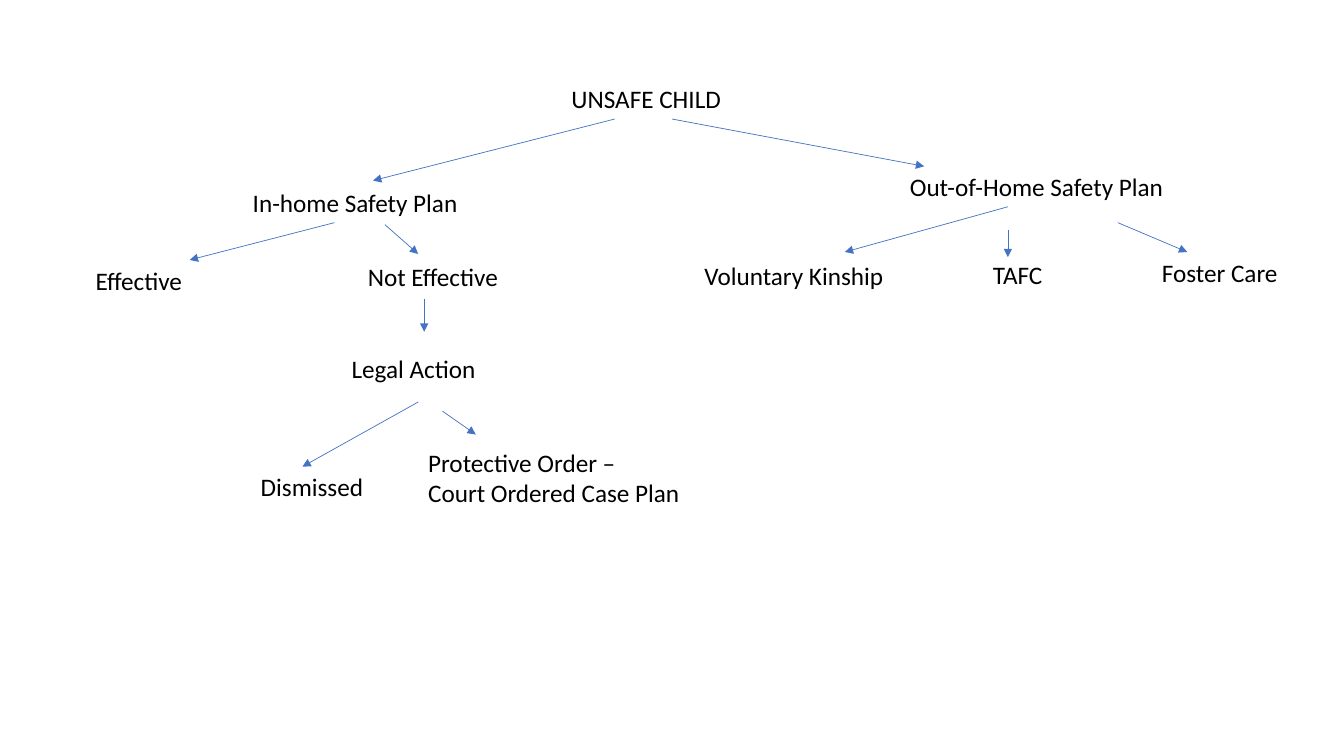
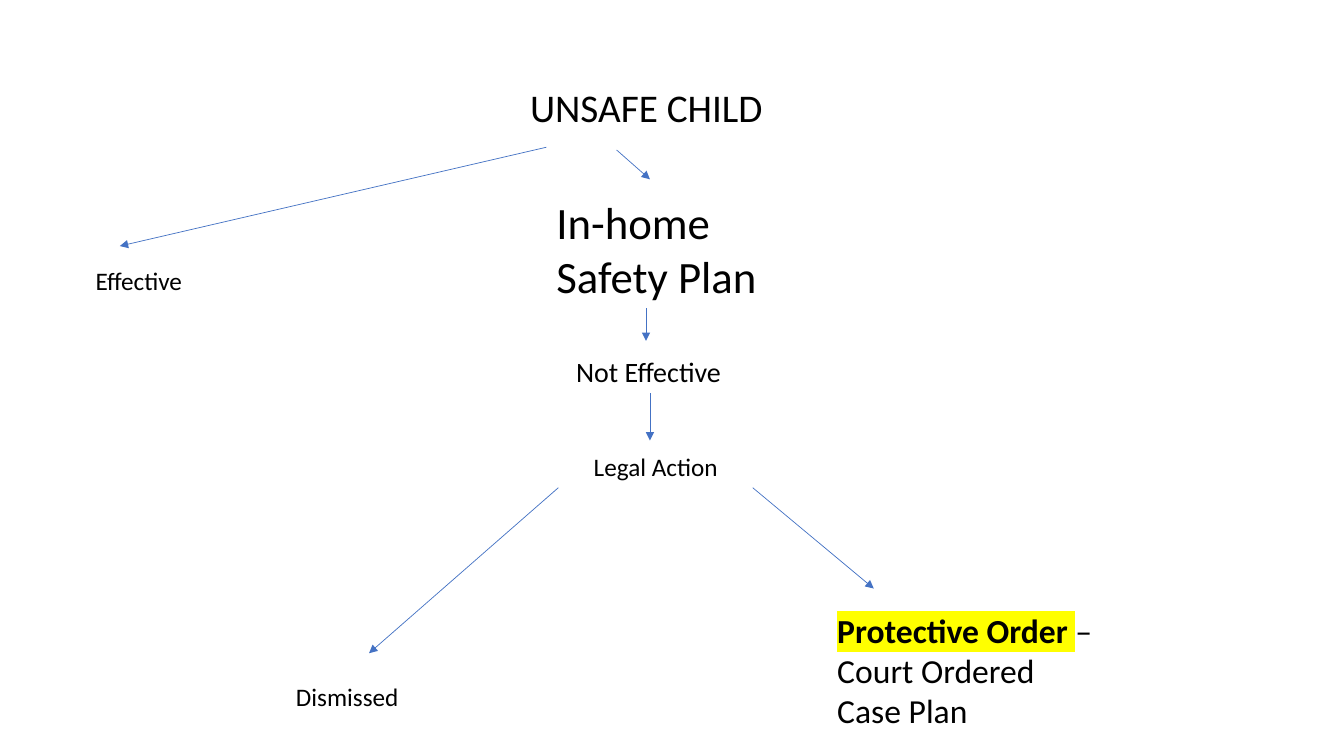
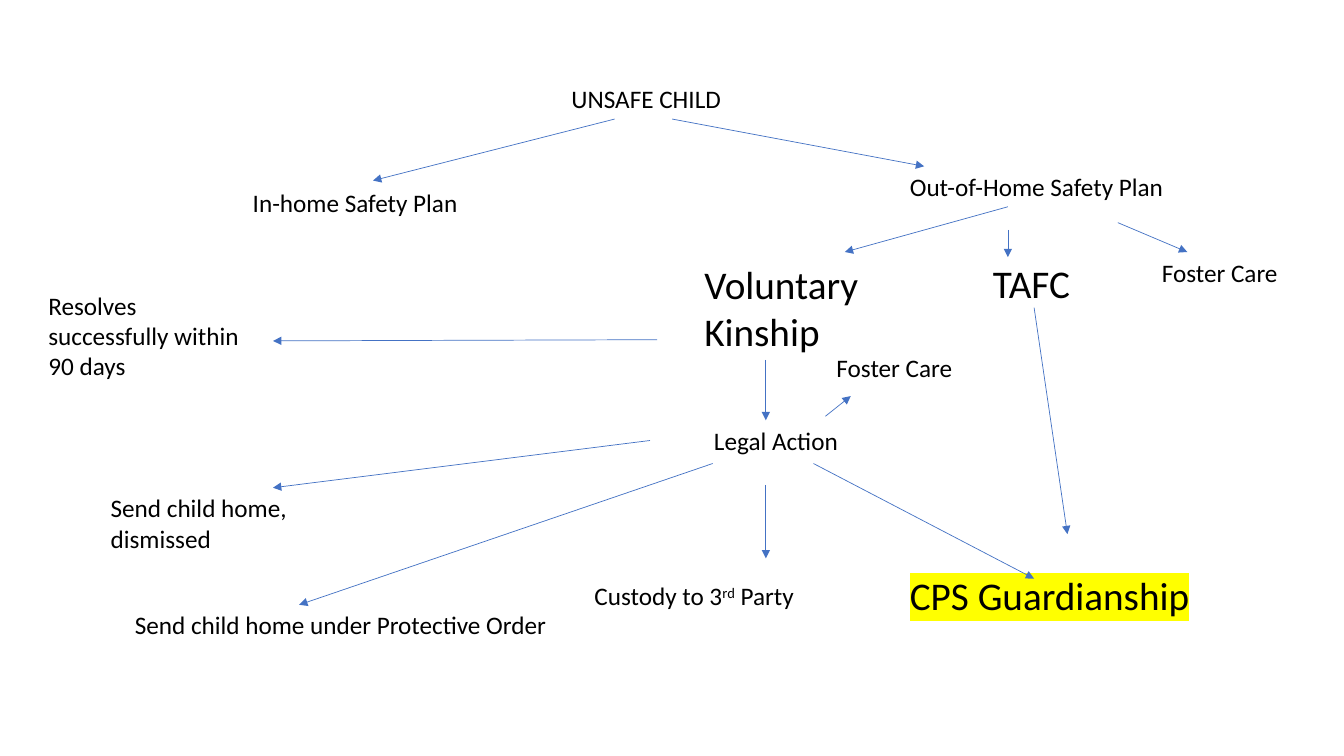
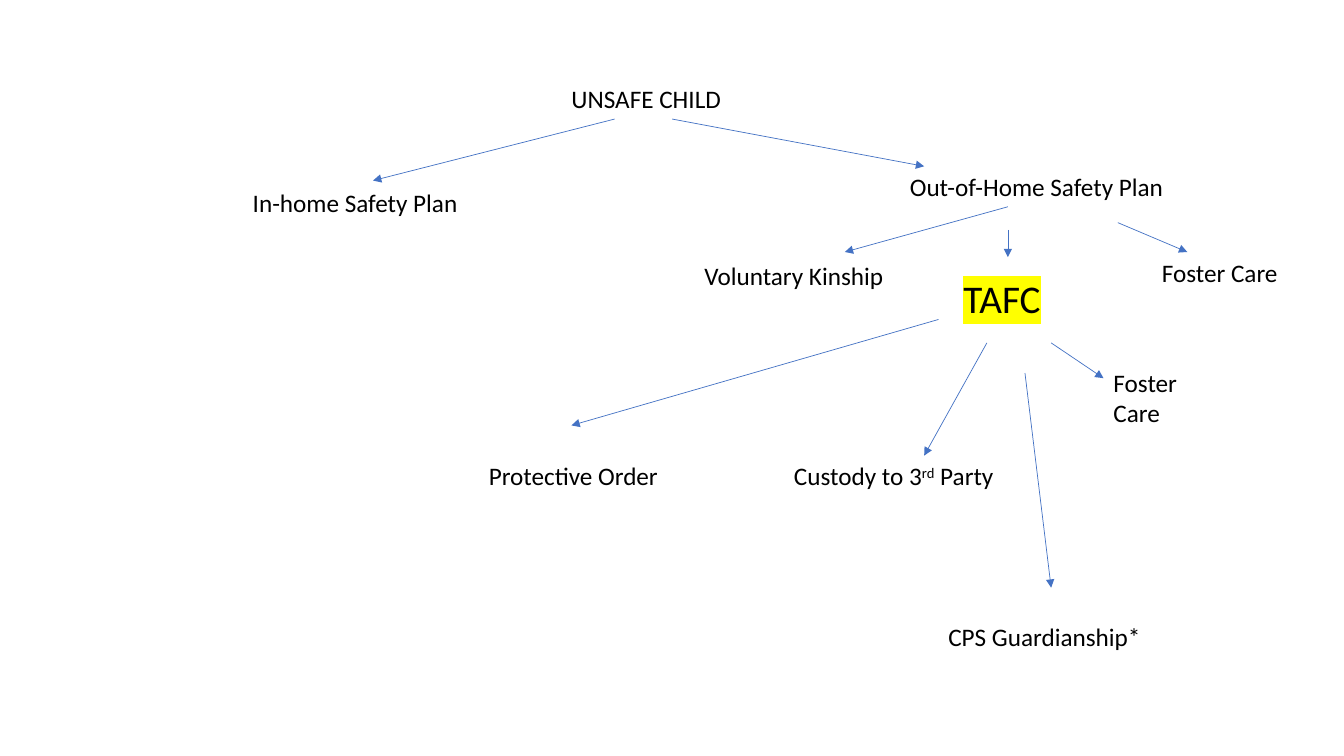
from lxml import etree
from pptx import Presentation
from pptx.dml.color import RGBColor
from pptx.enum.shapes import MSO_CONNECTOR
from pptx.enum.text import MSO_ANCHOR, MSO_AUTO_SIZE, PP_ALIGN
from pptx.oxml.ns import qn
from pptx.util import Cm, Pt

STRAIGHT = MSO_CONNECTOR.STRAIGHT
TOP = MSO_ANCHOR.TOP
GROW = MSO_AUTO_SIZE.SHAPE_TO_FIT_TEXT
LEFT, CENTER = PP_ALIGN.LEFT, PP_ALIGN.CENTER

BLACK = RGBColor(0x00, 0x00, 0x00)
ARROW_BLUE = RGBColor(0x44, 0x72, 0xC4)
MARKER_YELLOW = RGBColor(0xFF, 0xFF, 0x00)
FONT = "Calibri"
BODY, LARGE = 18, 28
BOTTOM_SIDE = 2

# Run styles
PLAIN, MARKED, BOLD_MARKED, RAISED = "plain", "marked", "bold marked", "raised"


def fill_label(box, text, x, y, width, size=BODY, lines=1, align=LEFT):
    """Place a box and write its text: a string, or paragraphs of (text, style) runs."""
    box.left, box.top, box.width = Cm(x), Cm(y), Cm(width)
    box.height = Cm(0.25) + lines * Pt(size * 1.2)
    frame = box.text_frame
    frame.word_wrap = True
    frame.auto_size = GROW
    frame.vertical_anchor = TOP
    paragraphs = [[(text, PLAIN)]] if isinstance(text, str) else text
    for index, runs in enumerate(paragraphs):
        paragraph = frame.add_paragraph() if index else frame.paragraphs[0]
        paragraph.alignment = align
        for words, style in runs:
            run = paragraph.add_run()
            run.text = words
            run.font.size = Pt(size)
            run.font.bold = style == BOLD_MARKED
            run.font.color.rgb = BLACK
            run.font.name = FONT
            properties = run.font._element
            if style in (MARKED, BOLD_MARKED):
                highlight = etree.Element(qn("a:highlight"))
                etree.SubElement(highlight, qn("a:srgbClr"), val=str(MARKER_YELLOW))
                properties.find(qn("a:latin")).addprevious(highlight)
            elif style == RAISED:
                properties.set("baseline", "30000")


def add_arrow(slide, start, end):
    """Draw an arrow to a point, from a point or from the bottom of a box."""
    from_point = isinstance(start, tuple)
    x, y = start if from_point else (0, 0)
    arrow = slide.shapes.add_connector(STRAIGHT, Cm(x), Cm(y), Cm(end[0]), Cm(end[1]))
    if not from_point:
        arrow.begin_connect(start, BOTTOM_SIDE)
    arrow.line.color.rgb = ARROW_BLUE
    arrow.line.width = Pt(0.5)
    etree.SubElement(arrow.line._get_or_add_ln(), qn("a:tailEnd"), type="triangle")
    etree.SubElement(arrow._element.spPr, qn("a:effectLst"))


# Labels: text, left, top, width, then size, lines and alignment where they differ.
# Arrows: start and end; a start given as text is the label of that name.
CUSTODY = [[("Custody to 3", PLAIN), ("rd", RAISED), (" Party", PLAIN)]]
EFFECTIVE = ("Effective", 2.16, 6.55, 3.61)

PLAN_LABELS = [
    ("In-home Safety Plan", 6.12, 4.6, 6.32),
    ("Out-of-Home Safety Plan", 22.68, 4.19, 8.43),
    ("Foster Care", 29.03, 6.35, 4.8),
]
PLAN_ARROWS = [
    ((15.49, 3), (9.4, 4.55)),
    ((16.94, 3), (23.29, 4.19)),
    ((25.4, 5.21), (21.29, 6.35)),
    ((25.4, 5.79), (25.4, 6.48)),
    ((28.17, 5.61), (29.92, 6.35)),
]

overview_labels = PLAN_LABELS + [
    EFFECTIVE,
    ("Not Effective", 9.02, 6.45, 4.22),
    ("Legal Action", 8.61, 8.79, 5.21),
    ("Dismissed", 6.32, 11.76, 4.22),
    ([[("Protective Order –", PLAIN)], [("Court Ordered Case Plan", PLAIN)]],
     10.54, 11.15, 6.96, BODY, 2),
    ("Voluntary Kinship", 17.5, 6.43, 5.79),
    ("TAFC", 24.77, 6.4, 4.24),
]
overview_arrows = PLAN_ARROWS + [
    ((8.43, 5.61), (4.78, 6.55)),
    ((9.7, 5.66), (10.54, 6.4)),
    ((10.69, 7.54), (10.69, 8.36)),
    ((10.54, 10.13), (7.62, 11.76)),
    ((11.15, 10.36), (11.99, 10.95)),
]

in_home_labels = [
    ("In-home Safety Plan", 13.77, 4.78, 6.32, 32, 2),
    EFFECTIVE,
    ("Not Effective", 14.27, 8.81, 4.22, 20),
    ("Legal Action", 13.92, 11.25, 5.21, BODY, 1, CENTER),
    ("Dismissed", 7.21, 17.04, 4.17),
    ([[("Protective Order ", BOLD_MARKED), ("–", PLAIN)],
      [("Court Ordered Case Plan", PLAIN)]], 20.85, 15.24, 6.96, 24, 3),
]
in_home_arrows = [
    ((13.77, 3.71), (3.02, 6.2)),
    ((15.54, 3.78), (16.38, 4.52)),
    ((16.28, 7.77), (16.28, 8.59)),
    ((14.07, 12.29), (9.3, 16.46)),
    ((18.97, 12.29), (22.02, 14.83)),
    ("Not Effective", (16.38, 11.1)),
]

kinship_labels = PLAN_LABELS + [
    ("Voluntary Kinship", 17.5, 6.43, 5.79, LARGE, 2),
    ("TAFC", 24.77, 6.4, 4.24, LARGE),
    ("Resolves successfully within 90 days", 0.97, 7.19, 5.56, BODY, 3),
    ("Legal Action", 16.38, 10.59, 6.35, BODY, 1, CENTER),
    ("Send child home, dismissed", 2.54, 12.29, 5.56, BODY, 2),
    ("Send child home under Protective Order", 3.15, 15.24, 11.3),
    (CUSTODY, 14.73, 14.5, 5.64),
    ([[("CPS Guardianship", MARKED)]], 22.68, 14.27, 7.62, LARGE),
    ("Foster Care", 20.83, 8.76, 3.45),
]
kinship_arrows = PLAN_ARROWS + [
    ((16.56, 8.56), (6.88, 8.59)),
    ((19.3, 9.07), (19.3, 10.59)),
    ((16.38, 11.1), (6.88, 12.29)),
    ((17.96, 11.68), (7.54, 15.24)),
    ((19.3, 12.22), (19.3, 14.07)),
    ((20.5, 11.68), (26.06, 14.58)),
    ((20.8, 10.49), (21.44, 9.98)),
    ((26.06, 7.75), (26.9, 13.46)),
]

tafc_labels = PLAN_LABELS + [
    ("Voluntary Kinship", 17.5, 6.43, 5.79),
    ([[("TAFC", MARKED)]], 24.03, 6.78, 4.24, LARGE),
    ("Protective Order", 12.07, 11.48, 5.44),
    (CUSTODY, 19.76, 11.48, 6.1),
    ("Foster Care", 27.81, 9.12, 3.3, BODY, 2),
    ("CPS Guardianship*", 23.65, 15.54, 8.23),
]
tafc_arrows = PLAN_ARROWS + [
    ((23.65, 8.05), (14.4, 10.72)),
    ((24.87, 8.64), (23.29, 11.48)),
    ((26.49, 8.64), (27.81, 9.53)),
    ((25.83, 9.4), (26.49, 14.81)),
]

presentation = Presentation()
presentation.slide_width, presentation.slide_height = Cm(33.87), Cm(19.05)
title_only = presentation.slide_layouts[5]

for title_size, labels, arrows in [
    (BODY, overview_labels, overview_arrows),
    (LARGE, in_home_labels, in_home_arrows),
    (BODY, kinship_labels, kinship_arrows),
    (BODY, tafc_labels, tafc_arrows),
]:
    slide = presentation.slides.add_slide(title_only)
    fill_label(slide.shapes.title, "UNSAFE CHILD", 12.07, 1.96, 8.43, title_size, 1, CENTER)
    boxes = {}
    for label in labels:
        box = slide.shapes.add_textbox(0, 0, 0, 0)
        fill_label(box, *label)
        boxes[box.text_frame.text] = box
    for start, end in arrows:
        add_arrow(slide, boxes[start] if isinstance(start, str) else start, end)

presentation.save("out.pptx")
